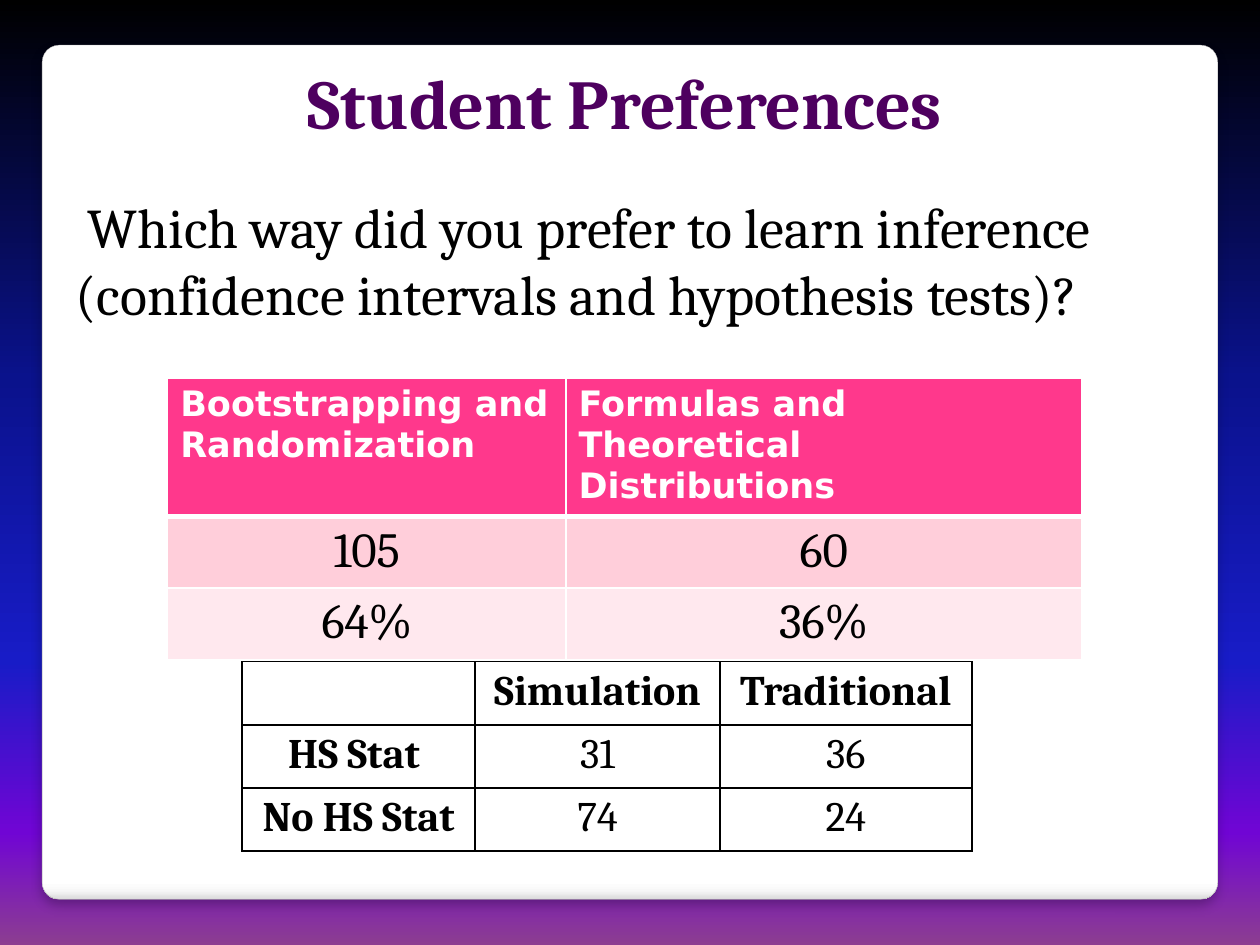
from dataclasses import dataclass

from lxml import etree
from pptx import Presentation
from pptx import util as u
from pptx.dml.color import RGBColor
from pptx.enum import shapes, text
from pptx.oxml.ns import qn

HUES = {
    "title": "4E005F", "ink": "000000", "white": "FFFFFF", "edge": "A4A4A4",
    "head": "FF388C", "band": "FFCEDA", "pale": "FFE8EE",
}
SKY = [(0, "000000"), (40, "0A128C"), (70, "181CC7"), (88, "7005D4"), (100, "8C3D91")]
SHEEN = [(0, "FFFFFF"), (98, "FFFFFF"), (99, "F7F7F7"), (100, "DADADA")]
SERIF, SANS = "Cambria", "DejaVu Sans"
MID, LEFT = text.PP_ALIGN.CENTER, text.PP_ALIGN.LEFT


@dataclass
class Font:
    size: float
    hue: str = "ink"
    bold: bool = False
    face: str = SERIF
    align: text.PP_ALIGN = MID


@dataclass
class Cell:
    text: str
    font: Font
    fill: str = "white"
    base: float = 1  # bottom border width in points


@dataclass
class Grid:
    left: float
    top: float
    cols: list[float]
    rows: list[float]
    cells: list[list[Cell]]
    line: str


def rgb(hue: str) -> RGBColor:
    return RGBColor.from_string(HUES[hue])


def shade(fill, root, stops: list[tuple[int, str]]) -> None:
    """Fill with a gradient that runs from top to bottom."""
    fill.gradient()
    fill.gradient_angle = 270
    ramp = root.find(".//" + qn("a:gsLst"))
    for old in list(ramp):
        ramp.remove(old)
    for pos, hue in stops:
        stop = etree.SubElement(ramp, qn("a:gs"), pos=str(pos * 1000))
        etree.SubElement(stop, qn("a:srgbClr"), val=hue)


def write(frame, words: str, font: Font) -> None:
    para = frame.paragraphs[0]
    para.text = words
    para.alignment = font.align
    for run in para.runs:
        run.font.name = font.face
        run.font.size = u.Pt(font.size)
        run.font.bold = font.bold
        run.font.color.rgb = rgb(font.hue)


def add_card(slide) -> None:
    card = slide.shapes.add_shape(
        shapes.MSO_SHAPE.ROUNDED_RECTANGLE,
        u.Cm(0.85), u.Cm(0.91), u.Cm(23.7), u.Cm(17.22))
    card.adjustments[0] = 0.02
    shade(card.fill, card.element.spPr, SHEEN)
    card.line.color.rgb = rgb("edge")
    card.line.width = u.Pt(0.16)
    # Soft shadow below the card
    card.shadow.inherit = False
    glow = card.element.spPr.find(qn("a:effectLst"))
    cast = etree.SubElement(
        glow, qn("a:outerShdw"), blurRad=str(u.Pt(6)), dist=str(u.Pt(4)),
        dir="5400000", algn="t", rotWithShape="0")
    tone = etree.SubElement(cast, qn("a:srgbClr"), val=HUES["ink"])
    etree.SubElement(tone, qn("a:alpha"), val="25000")


def add_note(slide, top: float, high: float, words: str, font: Font) -> None:
    box = slide.shapes.add_textbox(u.Cm(1.27), u.Cm(top), u.Cm(22.66), u.Cm(high))
    box.text_frame.word_wrap = True
    write(box.text_frame, words, font)


def add_edge(cell, side: str, hue: str, width: float) -> None:
    props = cell._tc.get_or_add_tcPr()
    line = etree.SubElement(props, qn("a:ln" + side), w=str(u.Pt(width)))
    fill = etree.SubElement(line, qn("a:solidFill"))
    etree.SubElement(fill, qn("a:srgbClr"), val=HUES[hue])


def add_grid(slide, grid: Grid) -> None:
    table = slide.shapes.add_table(
        len(grid.rows), len(grid.cols), u.Cm(grid.left), u.Cm(grid.top),
        u.Cm(sum(grid.cols)), u.Cm(sum(grid.rows))).table
    table.first_row = table.horz_banding = False
    for col, wide in zip(table.columns, grid.cols):
        col.width = u.Cm(wide)
    for row, high, cells in zip(table.rows, grid.rows, grid.cells):
        row.height = u.Cm(high)
        for spot, cell in zip(row.cells, cells):
            for side in "LRTB":
                add_edge(spot, side, grid.line, cell.base if side == "B" else 1)
            spot.fill.solid()
            spot.fill.fore_color.rgb = rgb(cell.fill)
            write(spot.text_frame, cell.text, cell.font)


def main() -> None:
    deck = Presentation()
    deck.slide_width, deck.slide_height = u.Cm(25.4), u.Cm(19.05)
    slide = deck.slides.add_slide(deck.slide_layouts[6])

    # Backdrop and card
    shade(slide.background.fill, slide.element, SKY)
    add_card(slide)

    # Title and question
    add_note(slide, 1.07, 3.38, "Student Preferences", Font(40, "title", True))
    add_note(slide, 3.76, 8.43,
             " Which way did you prefer to learn inference "
             "(confidence intervals and hypothesis tests)?",
             Font(32, align=LEFT))

    # Overall preference
    head = Font(20, "white", True, SANS, LEFT)
    big = Font(28)
    add_grid(slide, Grid(3.38, 7.62, [8.03, 10.39], [2.76, 1.42, 1.42], [
        [Cell(name, head, "head", 3) for name in (
            "Bootstrapping and Randomization",
            "Formulas and Theoretical Distributions")],
        [Cell(count, big, "band") for count in ("105", "60")],
        [Cell(share, big, "pale") for share in ("64%", "36%")],
    ], "white"))

    # Preference by background
    data = [["", "Simulation", "Traditional"],
            ["HS Stat ", "31", "36"],
            ["No HS Stat", "74", "24"]]
    add_grid(slide, Grid(4.88, 13.34, [4.7, 4.93, 5.08], [1.27] * 3, [
        [Cell(words, Font(24, bold=r == 0 or c == 0)) for c, words in enumerate(row)]
        for r, row in enumerate(data)
    ], "ink"))

    deck.save("out.pptx")


if __name__ == "__main__":
    main()
